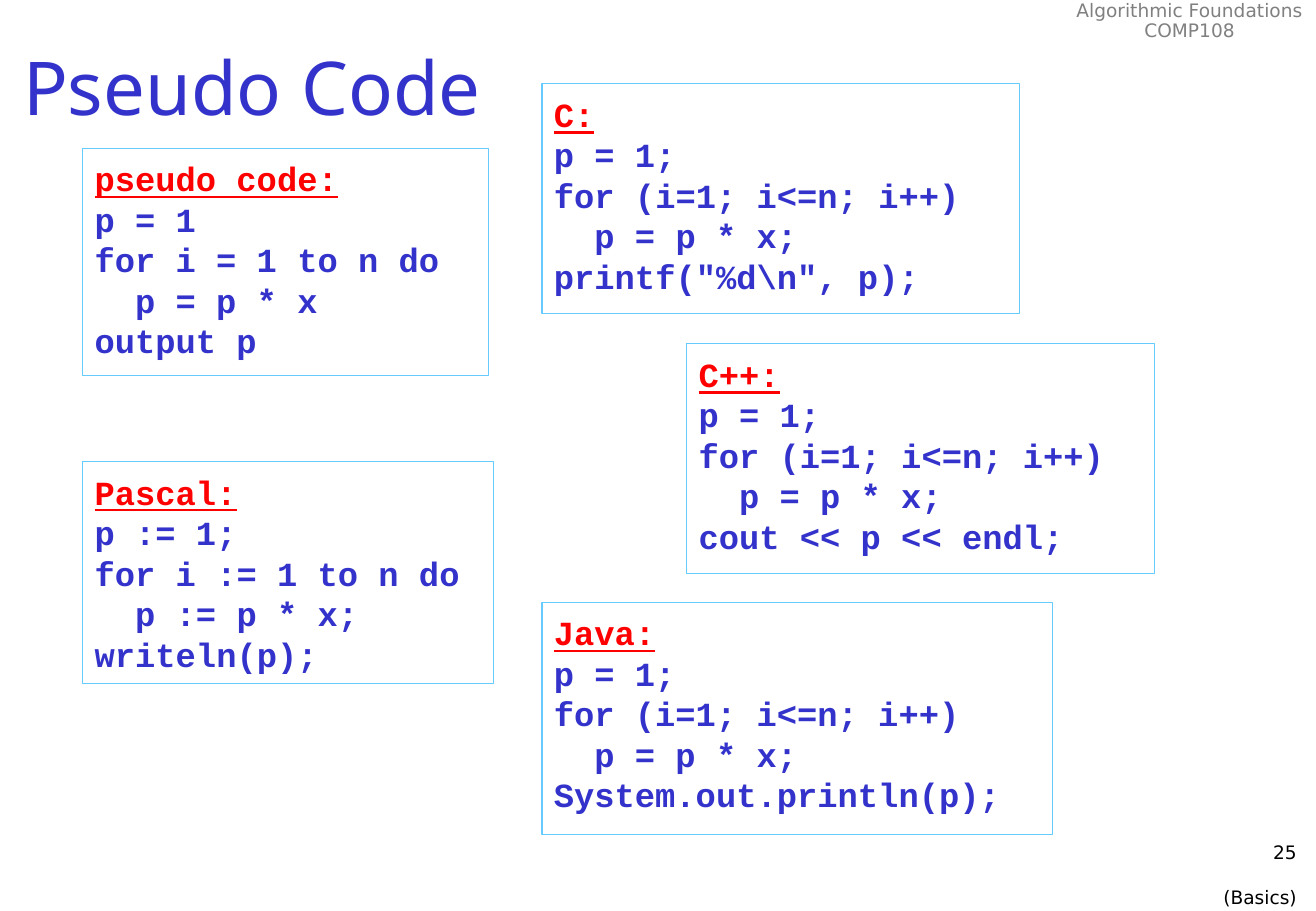
from dataclasses import dataclass

from pptx import Presentation
from pptx.dml.color import RGBColor
from pptx.enum.shapes import MSO_SHAPE as Shape
from pptx.enum.text import MSO_ANCHOR as Anchor, MSO_AUTO_SIZE as AutoSize, PP_ALIGN as Align
from pptx.util import Inches, Pt

WIDTH, HEIGHT = Inches(10.83), Inches(7.5)
COLUMN, ROW = WIDTH / 100, HEIGHT / 100
BLUE, RED, SKY, GREY, BLACK = "3333CC", "FF0000", "66CCFF", "808080", "000000"
CODE_FONT, LABEL_FONT, TITLE_FONT = "Courier New", "DejaVu Sans", "Noto Sans"


@dataclass(frozen=True)
class Area:
    col: float
    row: float
    cols: float
    rows: float

    def emu(self) -> tuple[int, int, int, int]:
        return (round(self.col * COLUMN), round(self.row * ROW),
                round(self.cols * COLUMN), round(self.rows * ROW))


@dataclass(frozen=True)
class Listing:
    area: Area
    language: str
    code: tuple[str, ...]


@dataclass(frozen=True)
class Label:
    area: Area
    lines: tuple[str, ...]
    color: str
    align: Align
    wrap: bool
    line_spacing: float
    gap: float


LOOP = ("p = 1;", "for (i=1; i<=n; i++)", "  p = p * x;")

LISTINGS = (
    Listing(Area(6.28, 16.27, 30.84, 24.93), "pseudo code:",
            ("p = 1", "for i = 1 to n do", "  p = p * x", "output p")),
    Listing(Area(52.17, 37.73, 35.55, 25.2), "C++:", (*LOOP, "cout << p << endl;")),
    Listing(Area(41.18, 9.2, 36.29, 25.2), "C:", (*LOOP, 'printf("%d\\n", p);')),
    Listing(Area(41.18, 66.13, 38.78, 25.47), "Java:", (*LOOP, "System.out.println(p);")),
    Listing(Area(6.28, 50.67, 31.21, 24.4), "Pascal:",
            ("p := 1;", "for i := 1 to n do", "  p := p * x;", "writeln(p);")),
)

LABELS = (
    Label(Area(80.79, -0.53, 19.21, 5.73), ("Algorithmic Foundations", "COMP108"),
          GREY, Align.CENTER, False, 0.9, 0),
    Label(Area(78.58, 91.6, 20.87, 6.67), ("25", "(Basics)"),
          BLACK, Align.RIGHT, True, 1.0, 14),
)


def rgb(color: str) -> RGBColor:
    return RGBColor.from_string(color)


def add_run(p, text: str, font: str, size: float, color: str, heading: bool = False):
    r = p.add_run()
    r.text = text
    r.font.name = font
    r.font.size = Pt(size)
    r.font.color.rgb = rgb(color)
    r.font.underline = heading
    return r


def next_paragraph(tf, index: int):
    return tf.add_paragraph() if index else tf.paragraphs[0]


def add_title(s, text: str, area: Area) -> None:
    sp = s.shapes.title
    sp.left, sp.top, sp.width, sp.height = area.emu()
    tf = sp.text_frame
    tf.auto_size = AutoSize.NONE
    tf.vertical_anchor = Anchor.MIDDLE
    p = tf.paragraphs[0]
    p.alignment = Align.LEFT
    add_run(p, text, TITLE_FONT, 44, BLUE)


def add_listing(s, listing: Listing) -> None:
    sp = s.shapes.add_shape(Shape.RECTANGLE, *listing.area.emu())
    sp.shadow.inherit = False
    sp.fill.background()
    sp.line.color.rgb = rgb(SKY)
    sp.line.width = Pt(0.75)
    tf = sp.text_frame
    tf.word_wrap = True
    tf.vertical_anchor = Anchor.TOP
    tf.margin_top = Inches(0.08)
    for i, line in enumerate((listing.language, *listing.code)):
        p = next_paragraph(tf, i)
        p.alignment = Align.LEFT
        p.line_spacing = Pt(24)
        pPr = p._p.get_or_add_pPr()
        pPr.set("marL", str(Inches(0.38)))
        pPr.set("indent", str(-Inches(0.38)))
        r = add_run(p, line, CODE_FONT, 20, BLUE if i else RED, heading=i == 0)
        r.font.bold = True


def add_label(s, label: Label) -> None:
    tf = s.shapes.add_textbox(*label.area.emu()).text_frame
    tf.word_wrap = label.wrap
    for i, line in enumerate(label.lines):
        p = next_paragraph(tf, i)
        p.alignment = label.align
        p.line_spacing = label.line_spacing
        p.space_before = Pt(label.gap if i else 0)
        add_run(p, line, LABEL_FONT, 11, label.color)


def main() -> None:
    prs = Presentation()
    prs.slide_width, prs.slide_height = WIDTH, HEIGHT
    s = prs.slides.add_slide(prs.slide_layouts[5])
    add_title(s, "Pseudo Code", Area(0.83, 1.07, 99.17, 16.67))
    for listing in LISTINGS:
        add_listing(s, listing)
    for label in LABELS:
        add_label(s, label)
    prs.save("out.pptx")


if __name__ == "__main__":
    main()
